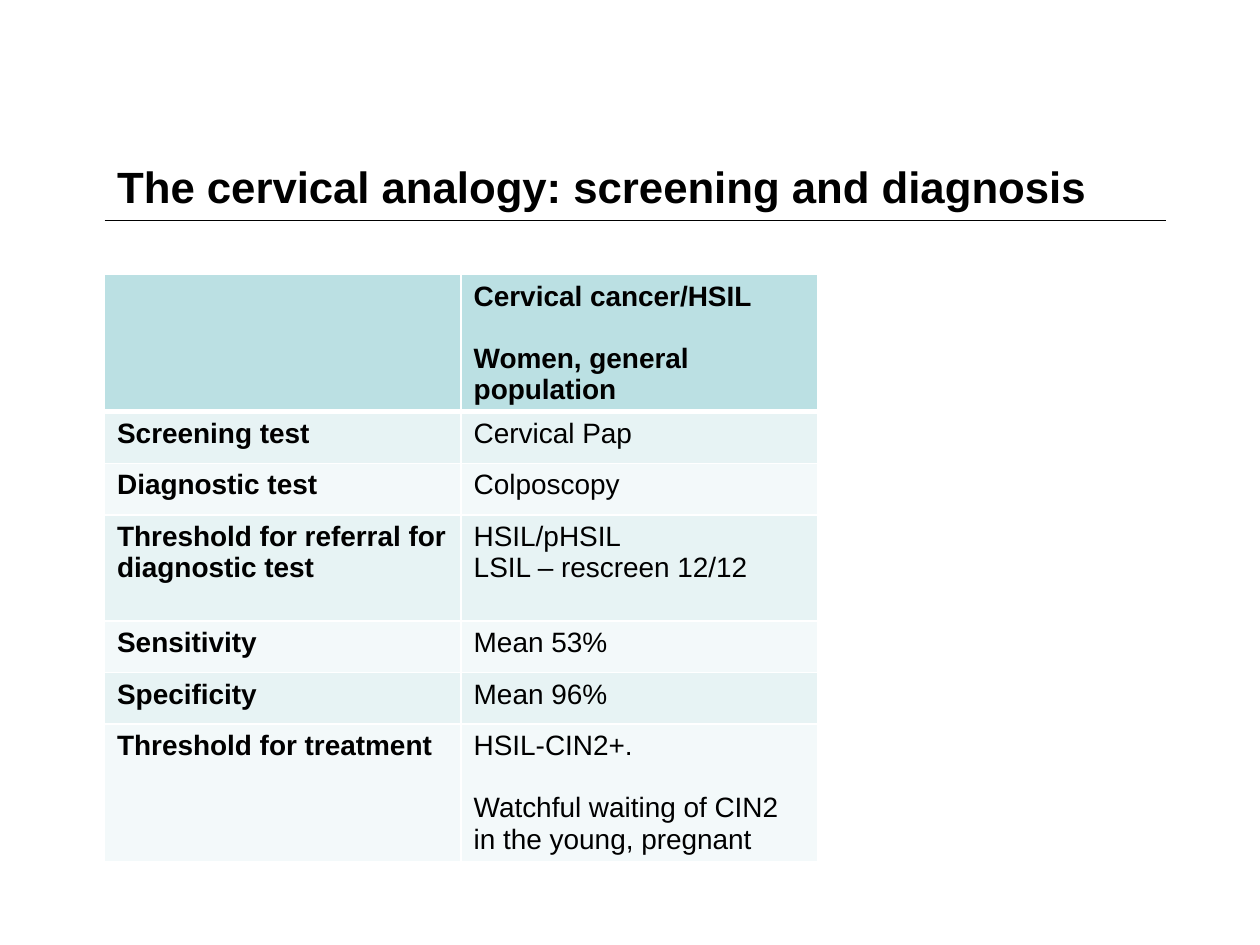
from lxml.etree import SubElement
from pptx import Presentation
from pptx.dml.color import RGBColor
from pptx.enum.shapes import MSO_CONNECTOR
from pptx.enum.text import MSO_ANCHOR, PP_ALIGN
from pptx.oxml.ns import qn
from pptx.util import Inches, Pt


def color(value):
    return RGBColor.from_string(value)


def write(p, text, size=16, bold=False, fill="000000", font="Arial", before=0):
    p.alignment = PP_ALIGN.LEFT
    p.space_before = Pt(before)
    r = p.add_run()
    r.text = text
    r.font.name = font
    r.font.size = Pt(size)
    r.font.bold = bold
    r.font.color.rgb = color(fill)


class SlideBuilder:
    header_fill = "BBE0E3"
    band_fills = ("F3F9FA", "E7F3F4")
    border = "FFFFFF"
    rule = "000000"
    gap = 17.8

    def __init__(self, prs):
        self.s = prs.slides.add_slide(prs.slide_layouts[5])

    def title(self, text, left, top, width, height):
        sp = self.s.shapes.title
        sp.left, sp.top = Inches(left), Inches(top)
        sp.width, sp.height = Inches(width), Inches(height)
        tf = sp.text_frame
        tf.word_wrap = True
        tf.vertical_anchor = MSO_ANCHOR.MIDDLE
        tf.margin_bottom = Inches(0.15)
        write(tf.paragraphs[0], text, size=25, bold=True)

    def line(self, left, right, y):
        cxn = self.s.shapes.add_connector(
            MSO_CONNECTOR.STRAIGHT, Inches(left), Inches(y), Inches(right), Inches(y))
        cxn.line.color.rgb = color(self.rule)
        cxn.line.width = Pt(0.75)
        SubElement(cxn._element.spPr, qn("a:effectLst"))

    def borders(self, cell, **widths):
        tc_pr = cell._tc.get_or_add_tcPr()
        for side in "LRTB":
            ln = SubElement(tc_pr, qn(f"a:ln{side}"), w=str(Pt(widths.get(side, 1))))
            fill = SubElement(ln, qn("a:solidFill"))
            SubElement(fill, qn("a:srgbClr"), val=self.border)

    def table(self, rows, heights, left, top, col_width):
        cols = len(rows[0])
        tbl = self.s.shapes.add_table(
            len(rows), cols, Inches(left), Inches(top),
            Inches(col_width * cols), Inches(sum(heights))).table
        for col in tbl.columns:
            col.width = Inches(col_width)
        for i, (row, height) in enumerate(zip(rows, heights)):
            tbl.rows[i].height = Inches(height)
            for j, blocks in enumerate(row):
                self.cell(tbl.cell(i, j), blocks, i, bold=i == 0 or j == 0)

    def cell(self, cell, blocks, row, bold):
        self.borders(cell, B=3 if row == 0 else 1, T=3 if row == 1 else 1)
        cell.fill.solid()
        cell.fill.fore_color.rgb = color(self.band_fills[row % 2] if row else self.header_fill)
        tf = cell.text_frame
        for b, lines in enumerate(blocks):
            for n, text in enumerate(lines):
                p = tf.add_paragraph() if b or n else tf.paragraphs[0]
                write(p, text, bold=bold, before=self.gap if b and not n else 0)


ROWS = [
    [[], [["Cervical cancer/HSIL"], ["Women, general population"]]],
    [[["Screening test"]], [["Cervical Pap"]]],
    [[["Diagnostic test"]], [["Colposcopy"]]],
    [[["Threshold for referral for diagnostic test"]],
     [["HSIL/pHSIL", "LSIL – rescreen 12/12"]]],
    [[["Sensitivity"]], [["Mean 53%"]]],
    [[["Specificity"]], [["Mean 96%"]]],
    [[["Threshold for treatment"]],
     [["HSIL-CIN2+."], ["Watchful waiting of CIN2 in the young, pregnant"]]],
]
HEIGHTS = [1.08, 0.41, 0.41, 0.84, 0.41, 0.41, 1.08]


def main():
    prs = Presentation()
    prs.slide_width, prs.slide_height = Inches(10), Inches(7.5)
    slide = SlideBuilder(prs)
    slide.line(0.83, 9.25, 1.75)
    slide.title("The cervical analogy: screening and diagnosis", 0.83, 1.19, 8.5, 0.67)
    slide.table(ROWS, HEIGHTS, 0.83, 2.18, 2.83)
    prs.save("out.pptx")


if __name__ == "__main__":
    main()
